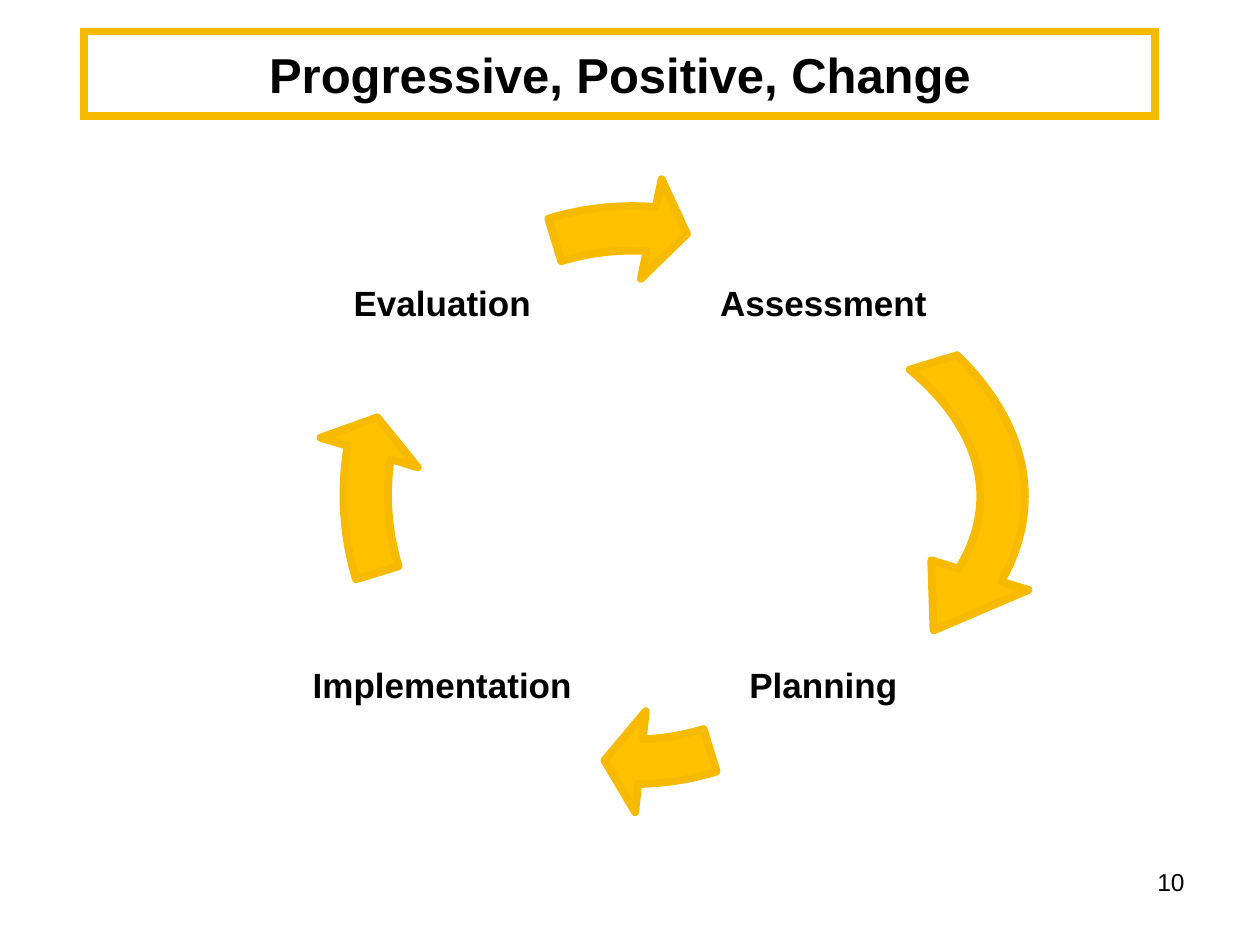
import dataclasses

import lxml.etree
import pptx
import pptx.dml.color
import pptx.enum.shapes
import pptx.enum.text
import pptx.oxml.ns
import pptx.util

SLIDE_WIDTH = pptx.util.Inches(10)
SLIDE_HEIGHT = pptx.util.Inches(7.5)
COLUMNS, ROWS = 100, 75
FONT = "Arial"
COLORS = {"text": "000000", "fill": "FFC000", "line": "F6BB00"}
ALIGN = pptx.enum.text.PP_ALIGN
ANCHOR = pptx.enum.text.MSO_ANCHOR

# Centres of the cycle's label columns and rows, in grid units
LEFT, RIGHT = 35.1, 65.35
TOP, BOTTOM = 24.2, 54.5
LABEL_HEIGHT = 17.8

# Shared proportions of the curved arrows
THICKNESS, HEAD_ANGLE, HEAD_WIDTH = 0.07, 7.75, 0.08
RING_HEIGHT = 50.4


@dataclasses.dataclass
class Stage:
    text: str
    center_column: float
    center_row: float
    width: float


@dataclasses.dataclass
class CycleArrow:
    start: float  # degrees, clockwise from the right
    end: float
    center_column: float = 50.2
    center_row: float = 39.3
    width: float = RING_HEIGHT


STAGES = [
    Stage("Assessment", RIGHT, TOP, 21.5),
    Stage("Planning", RIGHT, BOTTOM, 17.8),
    Stage("Implementation", LEFT, BOTTOM, 25.8),
    Stage("Evaluation", LEFT, TOP, 17.8),
]
ARROWS = [
    CycleArrow(343.07, 9.19, 39.15, 39.4, 88.9),
    CycleArrow(73.07, 88.28),
    CycleArrow(163.07, 189.19),
    CycleArrow(253.07, 274.04),
]


def grid_box(left: float, top: float, width: float, height: float) -> tuple:
    column, row = SLIDE_WIDTH / COLUMNS, SLIDE_HEIGHT / ROWS
    return (round(left * column), round(top * row),
            round(width * column), round(height * row))


def centered_box(column: float, row: float, width: float, height: float) -> tuple:
    return grid_box(column - width / 2, row - height / 2, width, height)


def color(name: str) -> pptx.dml.color.RGBColor:
    return pptx.dml.color.RGBColor.from_string(COLORS[name])


def outline(shape) -> None:
    shape.line.color.rgb = color("line")
    shape.line.width = pptx.util.Pt(4.5)


def write(shape, text: str, size: float, bold: bool, alignment, anchor) -> None:
    frame = shape.text_frame
    frame.text = text
    frame.word_wrap = True
    frame.vertical_anchor = anchor
    paragraph = frame.paragraphs[0]
    paragraph.alignment = alignment
    font = paragraph.runs[0].font
    font.name, font.size, font.bold = FONT, pptx.util.Pt(size), bold
    font.color.rgb = color("text")


def add_title(slide, text: str) -> None:
    title = slide.shapes.title
    title.left, title.top, title.width, title.height = grid_box(6.7, 2.5, 85, 6.7)
    write(title, text, 28, True, ALIGN.CENTER, ANCHOR.MIDDLE)
    outline(title)
    # Square corners on the frame
    line = title.line._get_or_add_ln()
    lxml.etree.SubElement(line, pptx.oxml.ns.qn("a:miter"), lim="800000")


def add_stage(slide, stage: Stage) -> None:
    label = slide.shapes.add_textbox(*centered_box(
        stage.center_column, stage.center_row, stage.width, LABEL_HEIGHT))
    write(label, stage.text, 20, True, ALIGN.CENTER, ANCHOR.MIDDLE)
    frame = label.text_frame
    frame.margin_left = frame.margin_right = pptx.util.Inches(0.03)
    frame.margin_top = frame.margin_bottom = pptx.util.Inches(0.03)
    frame.paragraphs[0].line_spacing = 0.9


def add_arrow(slide, arrow: CycleArrow) -> None:
    shape = slide.shapes.add_shape(
        pptx.enum.shapes.MSO_SHAPE.CIRCULAR_ARROW,
        *centered_box(arrow.center_column, arrow.center_row, arrow.width, RING_HEIGHT))
    # Angles are stored in 60000ths of a degree, adjustments in 100000ths
    head, end, start = (angle * 0.6 for angle in (HEAD_ANGLE, arrow.end, arrow.start))
    for index, value in enumerate((THICKNESS, head, end, start, HEAD_WIDTH)):
        shape.adjustments[index] = value
    shape.shadow.inherit = False
    shape.fill.solid()
    shape.fill.fore_color.rgb = color("fill")
    outline(shape)


def main() -> None:
    presentation = pptx.Presentation()
    presentation.slide_width, presentation.slide_height = SLIDE_WIDTH, SLIDE_HEIGHT
    slide = presentation.slides.add_slide(presentation.slide_layouts[5])

    add_title(slide, "Progressive, Positive, Change")

    # Cycle: each stage is followed by the arrow to the next one
    for stage, arrow in zip(STAGES, ARROWS):
        add_stage(slide, stage)
        add_arrow(slide, arrow)

    # Page number
    number = slide.shapes.add_textbox(*grid_box(71.7, 68.3, 23.3, 5.2))
    write(number, "10", 14, False, ALIGN.RIGHT, ANCHOR.TOP)

    presentation.save("out.pptx")


if __name__ == "__main__":
    main()
